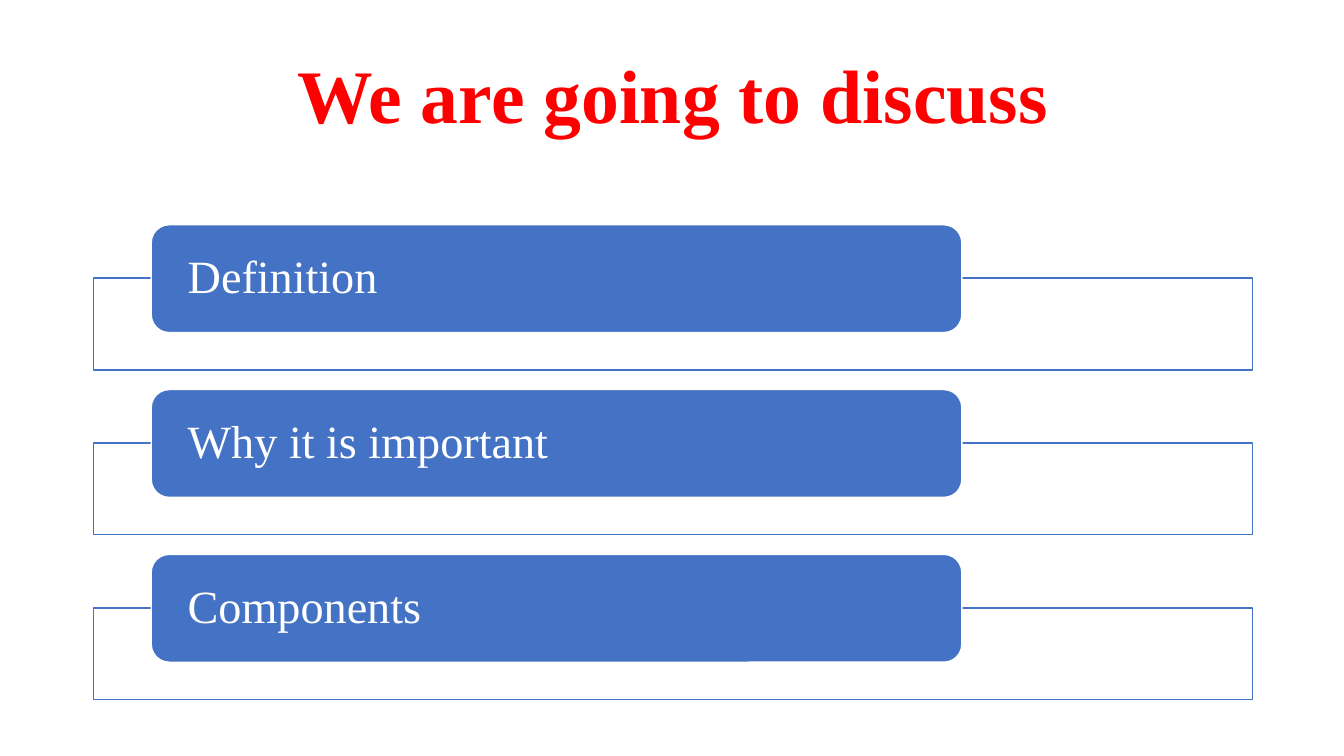
from pptx import Presentation
from pptx.dml.color import RGBColor
from pptx.enum.shapes import MSO_SHAPE
from pptx.enum.text import MSO_ANCHOR, PP_ALIGN
from pptx.oxml.ns import qn
from pptx.util import Inches, Pt
from lxml import etree

RED = RGBColor(0xFF, 0x00, 0x00)
BLUE = RGBColor(0x44, 0x72, 0xC4)
WHITE = RGBColor(0xFF, 0xFF, 0xFF)
FONT = "Times New Roman"
TOPICS = ["Definition", "Why it is important", "Components"]
FIRST_TOP = 2.23
TOPIC_PITCH = 1.635
FRAME_OFFSET = 0.53


def format_text(text_frame, size, color, alignment, bold=False):
    text_frame.word_wrap = True
    text_frame.vertical_anchor = MSO_ANCHOR.MIDDLE
    paragraph = text_frame.paragraphs[0]
    paragraph.alignment = alignment
    paragraph.line_spacing = 0.9
    font = paragraph.runs[0].font
    font.name = FONT
    font.size = Pt(size)
    font.bold = bold
    font.color.rgb = color


def add_title(slide, text):
    title = slide.shapes.title
    title.left, title.top = Inches(0.92), Inches(0.4)
    title.width, title.height = Inches(11.5), Inches(1.16)
    title.text_frame.text = text
    format_text(title.text_frame, 54, RED, PP_ALIGN.CENTER, bold=True)


def add_box(slide, preset, left, top, width, height, fill, line):
    shape = slide.shapes.add_shape(
        preset, Inches(left), Inches(top), Inches(width), Inches(height)
    )
    shape.shadow.inherit = False
    shape.fill.solid()
    shape.fill.fore_color.rgb = fill
    shape.line.color.rgb = line
    shape.line.width = Pt(1)
    return shape


def set_opacity(shape, percent):
    color = shape.fill._xPr.find(qn("a:solidFill"))[0]
    etree.SubElement(color, qn("a:alpha"), val=str(percent * 1000))


def add_topic(slide, text, top):
    frame = add_box(slide, MSO_SHAPE.RECTANGLE, 0.93, top + FRAME_OFFSET,
                    11.49, 0.91, WHITE, BLUE)
    set_opacity(frame, 90)
    label = add_box(slide, MSO_SHAPE.ROUNDED_RECTANGLE, 1.5, top,
                    8.04, 1.07, BLUE, WHITE)
    text_frame = label.text_frame
    text_frame.text = text
    text_frame.margin_left = text_frame.margin_right = Inches(0.31)
    text_frame.margin_top = text_frame.margin_bottom = 0
    format_text(text_frame, 33, WHITE, PP_ALIGN.LEFT)


def main():
    presentation = Presentation()
    presentation.slide_width = Inches(13.33)
    presentation.slide_height = Inches(7.5)
    slide = presentation.slides.add_slide(presentation.slide_layouts[5])
    add_title(slide, "We are going to discuss")
    for index, topic in enumerate(TOPICS):
        add_topic(slide, topic, FIRST_TOP + index * TOPIC_PITCH)
    presentation.save("out.pptx")


if __name__ == "__main__":
    main()
